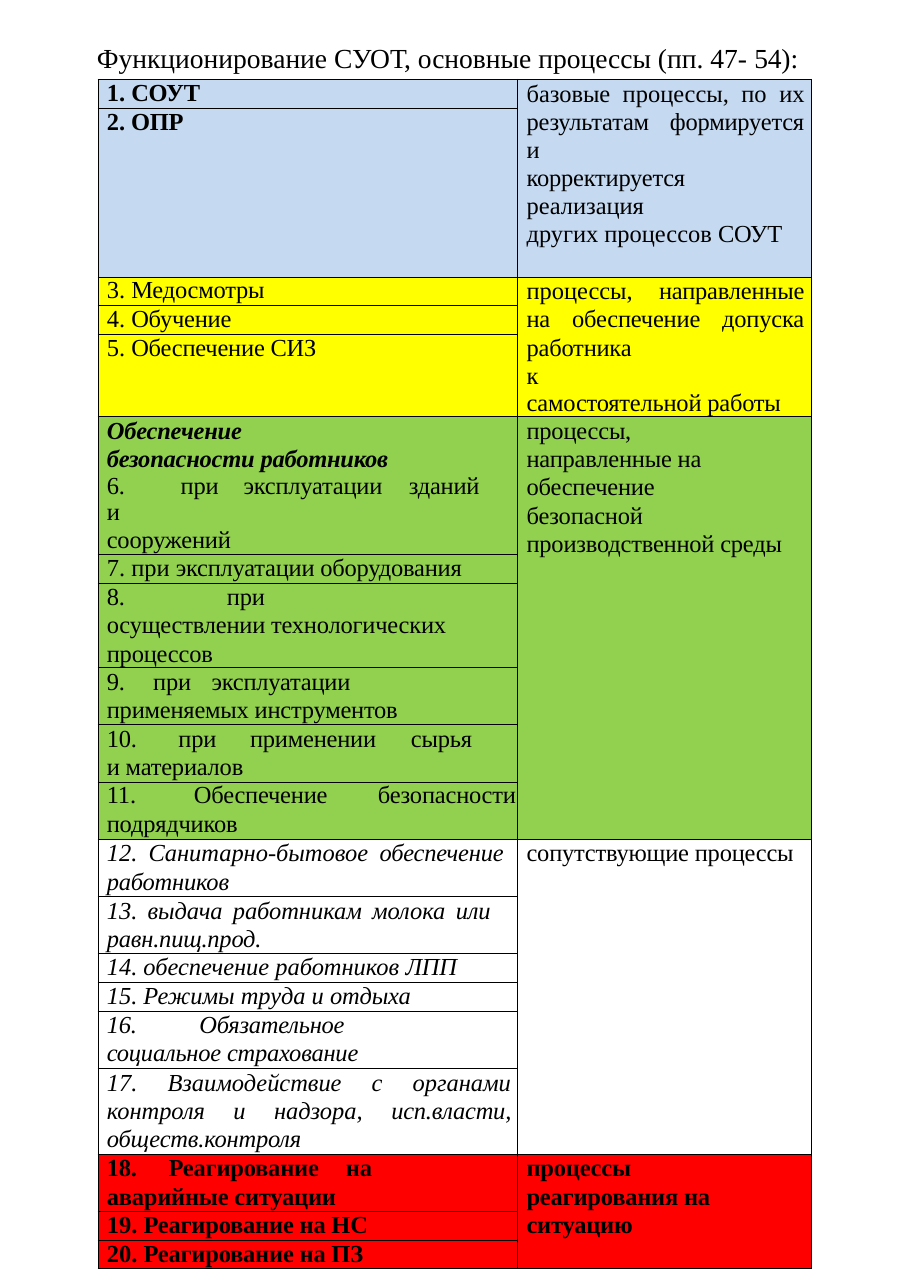
from dataclasses import dataclass

from lxml.etree import SubElement
from pptx import Presentation
from pptx.dml.color import RGBColor
from pptx.enum.text import MSO_ANCHOR, PP_ALIGN
from pptx.oxml import parse_xml
from pptx.oxml.ns import nsdecls, qn
from pptx.table import Table, _Cell
from pptx.util import Inches, Pt

LEFT, JUSTIFY = PP_ALIGN.LEFT, PP_ALIGN.JUSTIFY
TOP = MSO_ANCHOR.TOP
FONT = "Times New Roman"
BLACK, BLUE, YELLOW = "000000", "C5D9F0", "FFFF00"
GREEN, WHITE, RED = "92D050", "FFFFFF", "FF0000"
INDENT = 0.08
NO_MARGINS = {"margin_left": 0, "margin_right": 0, "margin_top": 0, "margin_bottom": 0}


@dataclass
class Line:
    text: str
    tabs: tuple[float, ...] = ()
    right: float = 0
    spacing: float = 18.4
    align: PP_ALIGN = LEFT
    bold: bool = False
    italic: bool = False


@dataclass
class Process:
    height: float
    lines: list[Line]


@dataclass
class Group:
    color: str
    processes: list[Process]
    note: list[Line]


def short(text: str, bold: bool = False, italic: bool = False, height: float = 0.26) -> Process:
    """Return a process whose name fits on one line."""
    return Process(height, [Line(text, spacing=17.9, bold=bold, italic=italic)])


GROUPS = [
    Group(BLUE, [
        short("1. |СОУТ", bold=True),
        short("2.| ОПР", bold=True, height=1.02),
    ], [
        Line("базовые процессы, по |их результатам формируется и\tкорректируется",
             (1.1,), 0.06, align=JUSTIFY),
        Line("реализация\tдругих процессов |СОУТ", (1.93,), 0.06, align=JUSTIFY),
    ]),
    Group(YELLOW, [
        short("3. |Медосмотры"),
        short("4. |Обучение"),
        short("5. |Обеспечение СИЗ", height=0.5),
    ], [
        Line("процессы, |направленные на обеспечение допуска работника\tк",
             (2.47,), 0.06, align=JUSTIFY),
        Line("самостоятельной работы", spacing=17.8, align=JUSTIFY),
    ]),
    Group(GREEN, [
        Process(1.03, [
            Line("Обеспечение\tбезопасности работников", (2.37,), 0.5, bold=True, italic=True),
            Line("6.\tпри\tэксплуатации\tзданий\tи", (0.67, 1.24, 2.74, 3.62), 0.07, 17.2),
            Line("сооружений", spacing=18.6),
        ]),
        short("7. при |эксплуатации оборудования"),
        Process(0.52, [Line("8.\tпри\tосуществлении технологических процессов",
                            (1.09, 2.28), 0.3)]),
        Process(0.52, [Line("9.\tпри\tэксплуатации\tприменяемых инструментов",
                            (0.42, 0.95, 2.43), 0.3)]),
        Process(0.52, [Line("10.\tпри\tприменении\tсырья\tи материалов",
                            (0.65, 1.3, 2.76, 3.62), 0.07)]),
        Process(0.52, [
            Line("11.\tОбеспечение\tбезопасности", (0.79, 2.46), spacing=17.6),
            Line("подрядчиков", spacing=18.8),
        ]),
    ], [
        Line("процессы,\tнаправленные на\t\tобеспечение", (1.24, 1.4), 0.1),
        Line("безопасной производственной среды"),
    ]),
    Group(WHITE, [
        Process(0.52, [Line("12. Санитарно-бытовое |обеспечение работников",
                            right=0.13, align=JUSTIFY, italic=True)]),
        Process(0.52, [Line("13. выдача работникам молока |или равн.пищ.прод.",
                            right=0.25, align=JUSTIFY, italic=True)]),
        short("14. обеспечение работников |ЛПП", italic=True),
        short("15. Режимы труда и |отдыха", italic=True),
        Process(0.52, [Line("16.\tОбязательное\tсоциальное страхование",
                            (0.84, 2.68), 0.3, italic=True)]),
        Process(0.78, [Line("17. Взаимодействие с органами контроля и надзора, "
                            "|исп.власти, обществ.контроля",
                            right=0.06, align=JUSTIFY, italic=True)]),
    ], [Line("сопутствующие процессы", spacing=17.9)]),
    Group(RED, [
        Process(0.52, [Line("18.\tРеагирование\tна\tаварийные ситуации",
                            (0.56, 2.17, 2.62), 0.3, bold=True)]),
        short("19. |Реагирование на НС", bold=True),
        short("20. |Реагирование на ПЗ", bold=True),
    ], [Line("процессы\tреагирования на ситуацию", (1.18,), 0.4, bold=True)]),
]


def rgb(color: str) -> RGBColor:
    """Turn a hex string into a colour."""
    return RGBColor.from_string(color)


def apply_format(target: object, values: dict) -> None:
    """Set every attribute named in the format values."""
    for name, value in values.items():
        setattr(target, name, value)


def add_text(paragraph, text: str, size: float, bold: bool = False, italic: bool = False) -> None:
    """Add black text, with letters set tighter after the bar sign."""
    plain, _, tight = text.rpartition("|")
    for part, letter_spacing in ((plain, "0"), (tight, "-10")):
        if part:
            run = paragraph.add_run()
            run.text = part
            apply_format(run.font, {"name": FONT, "size": Pt(size), "bold": bold, "italic": italic})
            run.font.color.rgb = rgb(BLACK)
            run.font._element.set("spc", letter_spacing)


def write_lines(cell: _Cell, lines: list[Line]) -> None:
    """Fill a cell with paragraphs, their indents and tab stops."""
    frame = cell.text_frame
    for index, line in enumerate(lines):
        paragraph = frame.add_paragraph() if index else frame.paragraphs[0]
        apply_format(paragraph, {"alignment": line.align, "line_spacing": Pt(line.spacing)})
        properties = paragraph._p.get_or_add_pPr()
        properties.set("marL", str(Inches(INDENT)))
        properties.set("marR", str(Inches(line.right)))
        if line.tabs:
            tab_list = SubElement(properties, qn("a:tabLst"))
            for position in line.tabs:
                SubElement(tab_list, qn("a:tab"), pos=str(Inches(position)), algn="l")
        add_text(paragraph, line.text, 16, line.bold, line.italic)


def style_cell(cell: _Cell, color: str) -> None:
    """Give a cell its fill, zero margins and thin black borders."""
    apply_format(cell, NO_MARGINS | {"vertical_anchor": TOP})
    cell.fill.solid()
    cell.fill.fore_color.rgb = rgb(color)
    properties = cell._tc.get_or_add_tcPr()
    for index, side in enumerate(("lnL", "lnR", "lnT", "lnB")):
        properties.insert(index, parse_xml(
            f'<a:{side} {nsdecls("a")} w="{Pt(0.5)}"><a:solidFill>'
            f'<a:srgbClr val="{BLACK}"/></a:solidFill></a:{side}>'))


def fill_group(table: Table, first: int, group: Group) -> None:
    """Write one group of processes and its merged note."""
    for row, process in enumerate(group.processes, first):
        table.rows[row].height = Inches(process.height)
        for cell in table.rows[row].cells:
            style_cell(cell, group.color)
        write_lines(table.cell(row, 0), process.lines)
        if row > first:
            hidden = table.cell(row, 1).text_frame.paragraphs[0]
            SubElement(hidden._p, qn("a:endParaRPr"), sz="1000")
    note = table.cell(first, 1)
    note.merge(table.cell(first + len(group.processes) - 1, 1))
    write_lines(note, group.note)


def main() -> None:
    """Build the slide with its heading and process table."""
    presentation = Presentation()
    apply_format(presentation, {"slide_width": Inches(8.26), "slide_height": Inches(11.69)})
    slide = presentation.slides.add_slide(presentation.slide_layouts[6])

    heading = slide.shapes.add_textbox(Inches(0.88), Inches(0.36), Inches(6.43), Inches(0.33))
    frame = heading.text_frame
    apply_format(frame, NO_MARGINS | {"margin_top": Inches(0.01), "word_wrap": True})
    frame.paragraphs[0].space_before = Pt(1)
    add_text(frame.paragraphs[0], "Функционирование СУОТ, основные процессы (пп. 47-| 54):", 18)

    heights = [process.height for group in GROUPS for process in group.processes]
    table = slide.shapes.add_table(len(heights), 2, Inches(0.89), Inches(0.72),
                                   Inches(6.47), Inches(sum(heights))).table
    apply_format(table, {"first_row": False, "horz_banding": False})
    for column, width in zip(table.columns, (3.81, 2.66)):
        column.width = Inches(width)
    first = 0
    for group in GROUPS:
        fill_group(table, first, group)
        first += len(group.processes)
    presentation.save("out.pptx")


if __name__ == "__main__":
    main()
